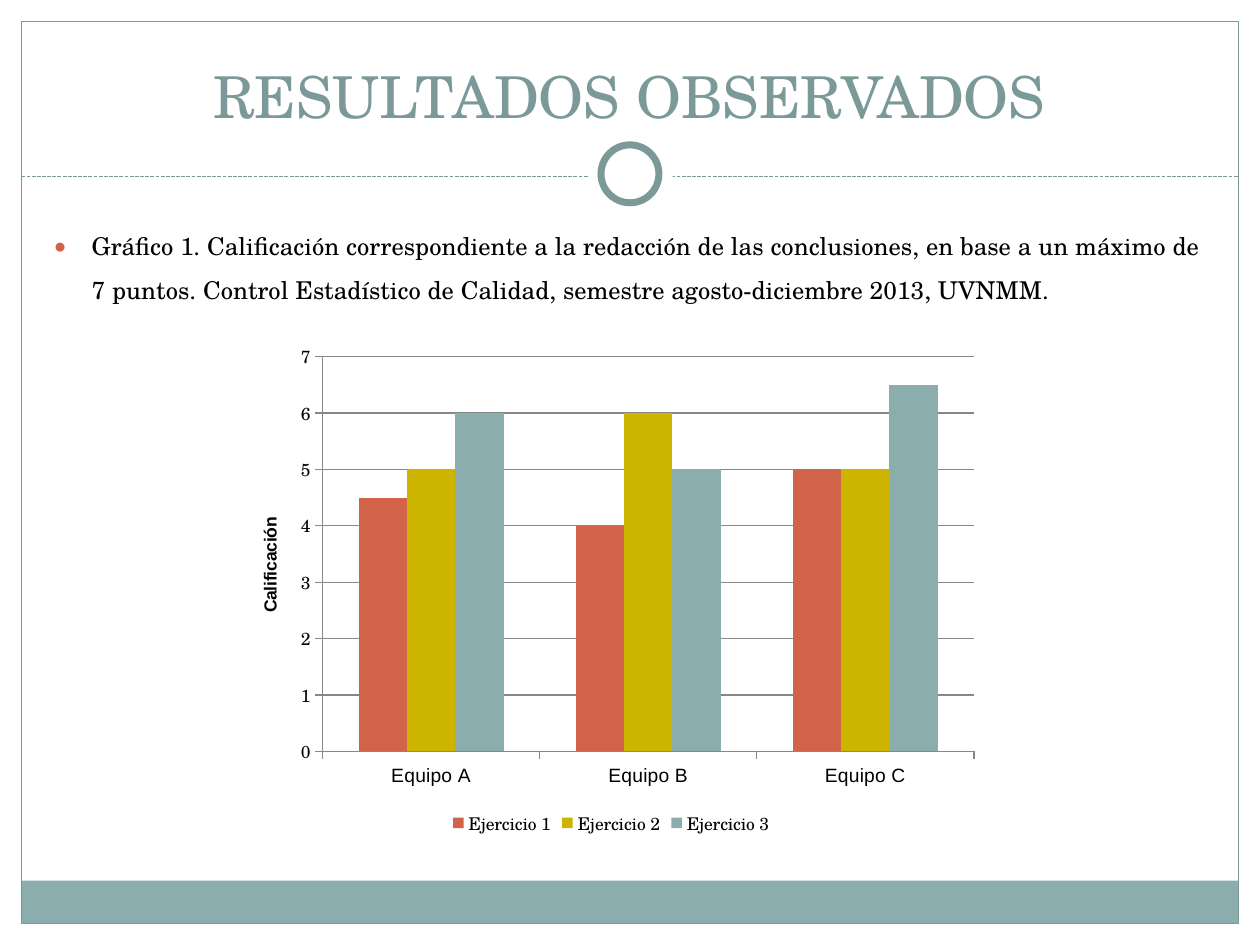
import pptx
import pptx.util
import pptx.chart.data
import pptx.dml.color
import pptx.enum.chart
import pptx.enum.dml
import pptx.enum.shapes
import pptx.enum.text
import pptx.oxml.ns
from dataclasses import dataclass
from lxml import etree

Inches = pptx.util.Inches
Pt = pptx.util.Pt
SERIF = "TeX Gyre Schola"
SANS = "Arial"
TEAL = "7C999A"
MIST = "8CADAE"
WHITE = "FFFFFF"
BLACK = "000000"
GREY = "878787"
KIND = pptx.enum.shapes.MSO_SHAPE


@dataclass
class Part:
    kind: int
    left: float
    top: float
    width: float
    height: float
    fill: str | None = None
    line: str | None = None
    weight: float = 0.75


@dataclass
class Series:
    name: str
    marks: tuple[float, ...]
    tint: str


FRAME = [
    Part(KIND.RECTANGLE, 0.17, 6.99, 9.66, 0.34, MIST),
    Part(KIND.RECTANGLE, 0.17, 0.17, 9.66, 7.16, None, TEAL),
]
RING = [
    Part(KIND.OVAL, 4.67, 1.05, 0.67, 0.67, WHITE),
    Part(KIND.OVAL, 4.77, 1.15, 0.46, 0.46, WHITE, TEAL, 4),
]
TEAMS = ["Equipo A", "Equipo B", "Equipo C"]
TESTS = [
    Series("Ejercicio 1", (4.5, 4, 5), "D16349"),
    Series("Ejercicio 2", (5, 6, 5), "CCB400"),
    Series("Ejercicio 3", (6, 5, 6.5), MIST),
]


def paint(target, tint: str) -> None:
    target.rgb = pptx.dml.color.RGBColor.from_string(tint)


def style(font, size: float, face: str, tint: str = BLACK, bold: bool = False) -> None:
    font.size = Pt(size)
    font.name = face
    font.bold = bold
    paint(font.color, tint)


def place(shape, left: float, top: float, width: float, height: float) -> None:
    shape.left, shape.top = Inches(left), Inches(top)
    shape.width, shape.height = Inches(width), Inches(height)


def draw(slide, part: Part) -> None:
    box = (part.left, part.top, part.width, part.height)
    shape = slide.shapes.add_shape(part.kind, *map(Inches, box))
    shape.shadow.inherit = False
    if part.fill:
        shape.fill.solid()
        paint(shape.fill.fore_color, part.fill)
    else:
        shape.fill.background()
    if part.line:
        paint(shape.line.color, part.line)
        shape.line.width = Pt(part.weight)
    else:
        shape.line.fill.background()


def add_rule(slide) -> None:
    ends = map(Inches, (0.17, 1.4, 9.83, 1.4))
    rule = slide.shapes.add_connector(pptx.enum.shapes.MSO_CONNECTOR.STRAIGHT, *ends)
    paint(rule.line.color, TEAL)
    rule.line.width = Pt(0.75)
    rule.line.dash_style = pptx.enum.dml.MSO_LINE.SQUARE_DOT
    etree.SubElement(rule.element.spPr, pptx.oxml.ns.qn("a:effectLst"))


def add_title(slide) -> None:
    title = slide.shapes.title
    place(title, 0.33, 0.25, 9.33, 0.83)
    frame = title.text_frame
    frame.text = "RESULTADOS OBSERVADOS"
    frame.auto_size = pptx.enum.text.MSO_AUTO_SIZE.NONE
    frame.vertical_anchor = pptx.enum.text.MSO_ANCHOR.BOTTOM
    line = frame.paragraphs[0]
    line.alignment = pptx.enum.text.PP_ALIGN.CENTER
    style(line.runs[0].font, 33, SERIF, TEAL)


def add_bullet(line, tint: str) -> None:
    props = line._p.get_or_add_pPr()
    props.set("marL", str(Inches(0.3)))
    props.set("indent", str(Inches(-0.3)))
    qn = pptx.oxml.ns.qn
    color = etree.SubElement(props, qn("a:buClr"))
    etree.SubElement(color, qn("a:srgbClr"), val=tint)
    etree.SubElement(props, qn("a:buSzPct"), val="85000")
    etree.SubElement(props, qn("a:buFont"), typeface=SANS)
    etree.SubElement(props, qn("a:buChar"), char="●")


def add_note(slide) -> None:
    box = slide.shapes.add_textbox(*map(Inches, (0.33, 1.67, 9.3, 0.95)))
    frame = box.text_frame
    frame.word_wrap = True
    frame.text = (
        "Gráfico 1. Calificación correspondiente a la redacción de las conclusiones, "
        "en base a un máximo de 7 puntos. Control Estadístico de Calidad, "
        "semestre agosto-diciembre 2013, UVNMM."
    )
    line = frame.paragraphs[0]
    line.alignment = pptx.enum.text.PP_ALIGN.JUSTIFY
    line.line_spacing = 1.5
    line.space_before = Pt(2.8)
    style(line.runs[0].font, 14, SERIF)
    add_bullet(line, "D16349")


def add_chart(slide) -> None:
    data = pptx.chart.data.CategoryChartData()
    data.categories = TEAMS
    for test in TESTS:
        data.add_series(test.name, test.marks)
    enum = pptx.enum.chart
    box = map(Inches, (1.85, 2.65, 6, 4.02))
    chart = slide.shapes.add_chart(enum.XL_CHART_TYPE.COLUMN_CLUSTERED, *box, data).chart
    style(chart.font, 10, SERIF)
    chart.has_title = False
    chart.has_legend = True
    chart.legend.position = enum.XL_LEGEND_POSITION.BOTTOM
    chart.legend.include_in_layout = False

    plot = chart.plots[0]
    plot.gap_width = 150
    plot.overlap = 0
    plot.vary_by_categories = False
    for bars, test in zip(plot.series, TESTS):
        bars.invert_if_negative = False
        bars.format.fill.solid()
        paint(bars.format.fill.fore_color, test.tint)

    base, scale = chart.category_axis, chart.value_axis
    for axis in (base, scale):
        axis.major_tick_mark = enum.XL_TICK_MARK.OUTSIDE
        axis.minor_tick_mark = enum.XL_TICK_MARK.NONE
        paint(axis.format.line.color, GREY)
    style(base.tick_labels.font, 11, SANS)
    style(scale.tick_labels.font, 10, SERIF)
    scale.minimum_scale, scale.maximum_scale, scale.major_unit = 0, 7, 1
    scale.has_major_gridlines = True
    paint(scale.major_gridlines.format.line.color, GREY)

    frame = scale.axis_title.text_frame
    frame.text = "Calificación"
    style(frame.paragraphs[0].runs[0].font, 10, SANS, bold=True)
    turn = next(scale.axis_title.element.iter(pptx.oxml.ns.qn("a:bodyPr")))
    turn.set("rot", "-5400000")
    turn.set("vert", "horz")


def main() -> None:
    deck = pptx.Presentation()
    deck.slide_width, deck.slide_height = Inches(10), Inches(7.5)
    slide = deck.slides.add_slide(deck.slide_layouts[5])
    for part in FRAME:
        draw(slide, part)
    add_rule(slide)
    for part in RING:
        draw(slide, part)
    add_title(slide)
    add_note(slide)
    add_chart(slide)
    deck.save("out.pptx")


if __name__ == "__main__":
    main()
